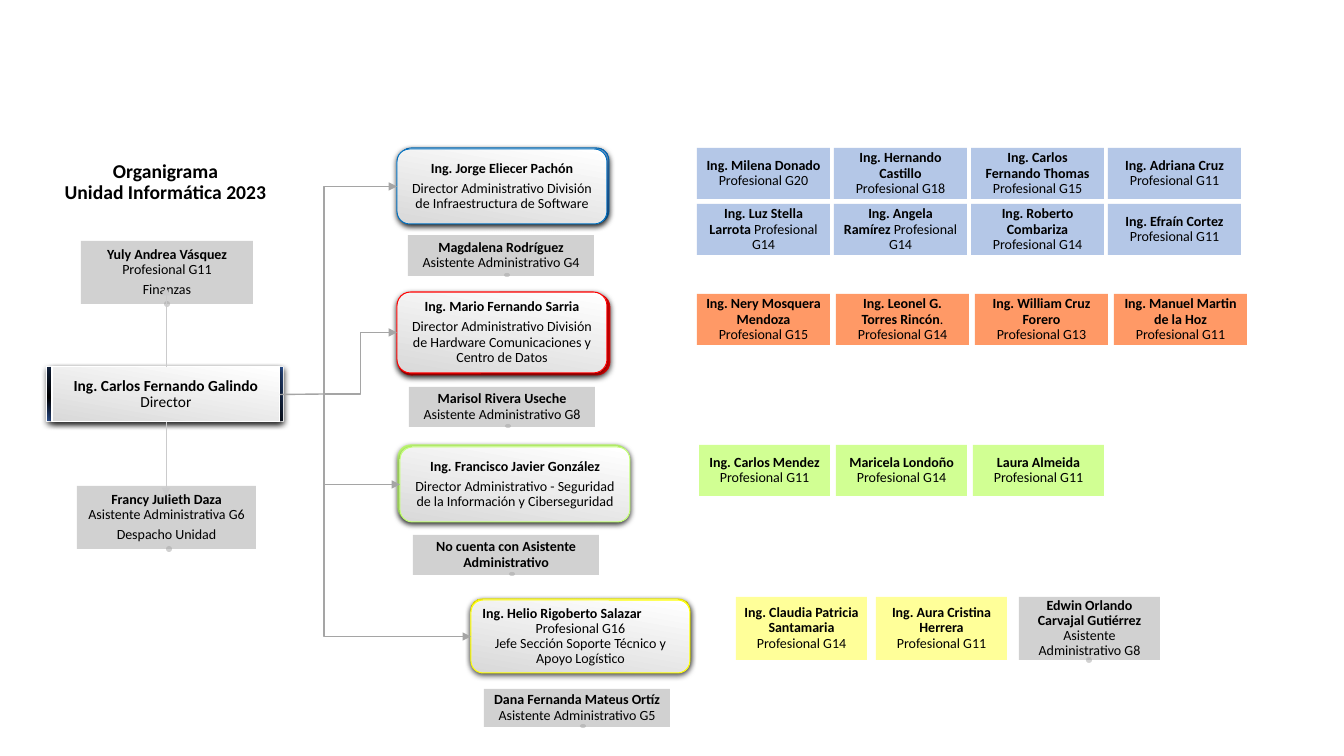
from copy import deepcopy
from dataclasses import dataclass

import pptx
import pptx.dml.color
import pptx.enum.shapes
import pptx.enum.text
import pptx.oxml
import pptx.oxml.ns
import pptx.util
from lxml import etree

EMU_PER_PX = 914400 / 100.8
SHAPE = pptx.enum.shapes.MSO_SHAPE
CONNECTOR = pptx.enum.shapes.MSO_CONNECTOR
ALIGN = pptx.enum.text.PP_ALIGN
qn = pptx.oxml.ns.qn

COLORS = {
    "text": "000000", "white": "FFFFFF", "grey": "A5A5A5", "silver": "D9D9D9",
    "thin": "CBCBCC", "navy": "2F5597", "blue": "0070C0", "red": "FF0000",
    "lime": "C1FF72", "yellow": "FFFF00", "blue staff": "B4C7E7",
    "orange staff": "FF9966", "lime staff": "D1FF93", "yellow staff": "FFFF99",
    "blue dark": "2A4B86", "blue mid": "4A76C6", "blue light": "8FAADC",
    "gold dark": "AB8100", "gold mid": "FFC208", "gold light": "FFD966",
}

Box = tuple[int, int, int, int]
Stops = list[tuple[int, str]]
Paragraphs = list[tuple[str, str]]  # bold part, regular part

CARD: Stops = [(0, "silver"), (99, "white")]
BLUE_BACK: Stops = [(0, "blue dark"), (48, "blue mid"), (100, "blue light")]
GOLD_BACK: Stops = [(0, "gold dark"), (48, "gold mid"), (100, "gold light")]


@dataclass
class Lead:
    box: Box
    back: Box
    outline: str
    back_stops: Stops
    text: Paragraphs
    elbow: int = 0  # bend, in percent of the way


@dataclass
class Assistant:
    box: Box
    text: Paragraphs
    dot_shift: int = 6
    dot_height: int = 4


@dataclass
class StaffRow:
    start: Box
    pitch: int
    color: str
    people: Paragraphs


LEADS = [
    Lead((397, 149, 210, 75), (399, 148, 210, 75), "blue", BLUE_BACK,
         [("Ing. Jorge Eliecer Pachón", ""),
          ("", "Director Administrativo División de Infraestructura de Software")]),
    Lead((397, 292, 210, 81), (398, 294, 212, 81), "red", [(0, "red"), (100, "red")],
         [("Ing. Mario Fernando Sarria", ""),
          ("", "Director Administrativo División de Hardware Comunicaciones y Centro de Datos")], 50),
    Lead((400, 447, 230, 75), (398, 445, 230, 75), "lime", [(0, "lime"), (100, "lime")],
         [("Ing. Francisco Javier González", ""),
          ("", "Director Administrativo - Seguridad de la Información y Ciberseguridad")]),
    Lead((471, 600, 219, 73), (471, 599, 219, 69), "yellow", GOLD_BACK,
         [("Ing. Helio Rigoberto Salazar", ""),
          ("", "Profesional G16\nJefe Sección Soporte Técnico y Apoyo Logístico")]),
]
ASSISTANTS = [
    Assistant((81, 241, 172, 63),
              [("Yuly Andrea Vásquez", "\nProfesional G11"), ("", "Finanzas")], 0, 6),
    Assistant((77, 486, 179, 63),
              [("Francy Julieth Daza", "\nAsistente Administrativa G6"), ("", "Despacho Unidad")], 3, 6),
    Assistant((408, 235, 186, 41), [("Magdalena Rodríguez", "\nAsistente Administrativo G4")]),
    Assistant((409, 387, 186, 40), [("Marisol Rivera Useche", "\nAsistente Administrativo G8")]),
    Assistant((413, 535, 186, 40), [("No cuenta con Asistente Administrativo", "")]),
    Assistant((484, 689, 186, 38), [("Dana Fernanda Mateus Ortíz", "\nAsistente Administrativo G5")]),
    Assistant((1019, 597, 141, 63),
              [("Edwin Orlando Carvajal Gutiérrez", "\nAsistente Administrativo G8")], 0, 6),
]
STAFF = [
    StaffRow((697, 148, 133, 51), 137, "blue staff", [
        ("Ing. Milena Donado", "\nProfesional G20"), ("Ing. Hernando Castillo", "\nProfesional G18"),
        ("Ing. Carlos Fernando Thomas", "\nProfesional G15"), ("Ing. Adriana Cruz", "\nProfesional G11")]),
    StaffRow((697, 204, 133, 51), 137, "blue staff", [
        ("Ing. Luz Stella Larrota", " Profesional G14"), ("Ing. Angela\nRamírez", " Profesional G14"),
        ("Ing. Roberto Combariza", "\nProfesional G14"), ("Ing. Efraín Cortez", "\nProfesional G11")]),
    StaffRow((697, 294, 133, 51), 139, "orange staff", [
        ("Ing. Nery Mosquera Mendoza", "\nProfesional G15"), ("Ing. Leonel G. Torres Rincón", ".\nProfesional G14"),
        ("Ing. William Cruz Forero", "\nProfesional G13"), ("Ing. Manuel Martin de la Hoz", "\nProfesional G11")]),
    StaffRow((699, 445, 131, 51), 137, "lime staff", [
        ("Ing. Carlos Mendez", "\nProfesional G11"), ("Maricela Londoño", "\nProfesional G14"),
        ("Laura Almeida", "\nProfesional G11")]),
    StaffRow((736, 597, 131, 63), 140, "yellow staff", [
        ("Ing. Claudia Patricia Santamaria", "\nProfesional G14"),
        ("Ing. Aura Cristina Herrera", "\nProfesional G11")]),
]


def px(n: float) -> int:
    return round(n * EMU_PER_PX)


def rgb(name: str) -> pptx.dml.color.RGBColor:
    return pptx.dml.color.RGBColor.from_string(COLORS[name])


def write(sp, paragraphs: Paragraphs, size: int = 10, margin: int = 8, after: float = 3.5) -> None:
    tf = sp.text_frame
    tf.word_wrap = True
    tf.vertical_anchor = pptx.enum.text.MSO_ANCHOR.MIDDLE
    tf.margin_left = tf.margin_right = px(margin)
    tf.margin_top = tf.margin_bottom = px(7)
    for i, parts in enumerate(paragraphs):
        p = tf.add_paragraph() if i else tf.paragraphs[0]
        p.alignment = ALIGN.CENTER
        p.line_spacing = 0.9
        p.space_after = pptx.util.Pt(after)
        p.font.size = pptx.util.Pt(size)
        p.font.name = "Calibri"
        p.font.color.rgb = rgb("text")
        for part, bold in zip(parts, (True, False)):
            for j, line in enumerate(part.split("\n")):
                if j:
                    p.add_line_break()
                if line:
                    r = p.add_run()
                    r.text = line
                    r.font.bold = bold


def add_box(s, kind, box: Box, color: str, transparent: bool = False):
    sp = s.shapes.add_shape(kind, *map(px, box))
    sp.shadow.inherit = False
    sp.fill.solid()
    sp.fill.fore_color.rgb = rgb(color)
    sp.line.fill.background()
    if transparent:
        clr = sp._element.spPr.find(qn("a:solidFill"))[0]
        etree.SubElement(clr, qn("a:alpha"), val="50000")
    return sp


def add_card(s, kind, box: Box, stops: Stops, outline: str, angle: int = 80):
    """Add a gradient shape with an outline and a soft shadow below."""
    sp = add_box(s, kind, box, outline)
    sp.line.color.rgb = rgb(outline)
    sp.line.width = pptx.util.Pt(0.75)
    sp.fill.gradient()
    sp.fill.gradient_angle = angle
    gs_list = sp._element.spPr.find(".//" + qn("a:gsLst"))
    for _ in stops[2:]:
        gs_list.append(deepcopy(gs_list[0]))
    for stop, (position, color) in zip(sp.fill.gradient_stops, stops):
        stop.position = position / 100
        stop.color.rgb = rgb(color)
    effects = sp._element.spPr.find(qn("a:effectLst"))
    shadow = etree.SubElement(effects, qn("a:outerShdw"), blurRad="57150", dist="19050",
                              dir="5400000", algn="ctr", rotWithShape="0")
    clr = etree.SubElement(shadow, qn("a:srgbClr"), val=COLORS["text"])
    etree.SubElement(clr, qn("a:alpha"), val="63000")
    return sp


def add_line(s, kind, start: tuple[int, int], end: tuple[int, int], color: str,
             width: float, arrow: bool = True):
    cx = s.shapes.add_connector(kind, *map(px, start + end))
    cx.line.color.rgb = rgb(color)
    cx.line.width = pptx.util.Pt(width)
    if arrow:
        etree.SubElement(cx.line._get_or_add_ln(), qn("a:tailEnd"), type="triangle")
    etree.SubElement(cx._element.spPr, qn("a:effectLst"))
    return cx


def add_lead(s, lead: Lead, trunk: tuple[int, int]) -> None:
    add_card(s, SHAPE.ROUNDED_RECTANGLE, lead.back, lead.back_stops, lead.outline, 90)
    sp = add_card(s, SHAPE.ROUNDED_RECTANGLE, lead.box, CARD, lead.outline)
    write(sp, lead.text)
    if lead.outline == "yellow":
        name = sp.text_frame.paragraphs[0]
        name.alignment = ALIGN.LEFT
        name.space_after = pptx.util.Pt(0)
    left, top, _, height = lead.box
    cx = add_line(s, CONNECTOR.ELBOW, trunk, (left, top + height // 2), "grey", 1)
    cx.end_connect(sp, 1)
    guides = cx._element.spPr.find(qn("a:prstGeom")).find(qn("a:avLst"))
    etree.SubElement(guides, qn("a:gd"), name="adj1", fmla=f"val {lead.elbow * 1000}")


def add_assistant(s, a: Assistant) -> None:
    left, top, width, height = a.box
    write(add_box(s, SHAPE.RECTANGLE, a.box, "grey", True), a.text)
    dot = (left + width // 2 + a.dot_shift - 3, top + height - 3, 6, a.dot_height)
    add_box(s, SHAPE.OVAL, dot, "grey", True)


def main() -> None:
    prs = pptx.Presentation()
    prs.slide_width, prs.slide_height = px(1344), px(756)
    s = prs.slides.add_slide(prs.slide_layouts[6])
    title = s.shapes.add_textbox(*map(px, (52, 157, 227, 52)))
    write(title, [("Organigrama\nUnidad Informática 2023", "")], 14, 10, 0)
    for a in ASSISTANTS:
        add_assistant(s, a)
    add_card(s, SHAPE.RECTANGLE, (47, 367, 237, 55), [(0, "navy"), (26, "text"), (100, "navy")], "white")
    director = add_card(s, SHAPE.RECTANGLE, (52, 367, 228, 55), CARD, "white")
    write(director, [("Ing. Carlos Fernando Galindo", "\nDirector")], 11, 20)
    for side, start, end in ((0, 367, 287), (2, 422, 496)):
        add_line(s, CONNECTOR.STRAIGHT, (166, start), (166, end), "thin", 0.5).begin_connect(director, side)
    trunk = (324, 394)
    add_line(s, CONNECTOR.STRAIGHT, (280, 394), trunk, "grey", 1, False).begin_connect(director, 3)
    for lead in LEADS:
        add_lead(s, lead, trunk)
    for row in STAFF:
        left, top, width, height = row.start
        for i, person in enumerate(row.people):
            box = (left + i * row.pitch, top, width, height)
            write(add_box(s, SHAPE.RECTANGLE, box, row.color), [person])
    prs.save("out.pptx")


if __name__ == "__main__":
    main()
